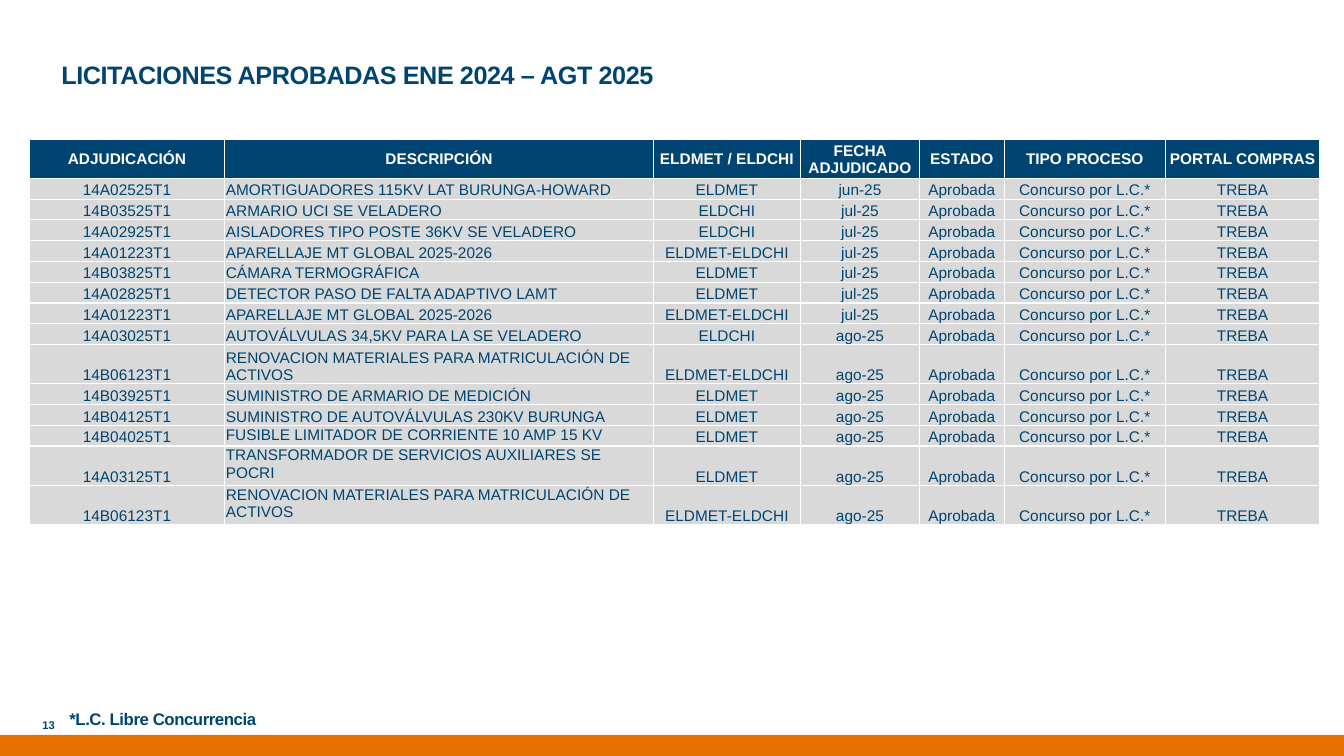
from dataclasses import dataclass

from lxml import etree
from pptx import Presentation
from pptx.dml.color import RGBColor
from pptx.enum.shapes import MSO_SHAPE
from pptx.enum.text import MSO_ANCHOR, PP_ALIGN
from pptx.oxml.ns import qn
from pptx.util import Inches, Pt

RECTANGLE = MSO_SHAPE.RECTANGLE
TOP, MIDDLE, BOTTOM = MSO_ANCHOR.TOP, MSO_ANCHOR.MIDDLE, MSO_ANCHOR.BOTTOM
LEFT, CENTER = PP_ALIGN.LEFT, PP_ALIGN.CENTER


@dataclass(frozen=True)
class Theme:
    font: str = "Arial"
    navy: str = "004571"
    orange: str = "E57200"
    gray: str = "D9D9D9"
    white: str = "FFFFFF"
    title_size: int = 18
    note_size: int = 12
    table_size: int = 11
    page_size: int = 8
    line_spacing: float = 0.92
    tracking: int = -30


THEME = Theme()

HEADERS = [
    "ADJUDICACIÓN", "DESCRIPCIÓN", "ELDMET / ELDCHI", "FECHA ADJUDICADO",
    "ESTADO", "TIPO PROCESO", "PORTAL COMPRAS",
]
COLUMN_WIDTHS = [1.94, 4.25, 1.46, 1.18, 0.84, 1.6, 1.53]
DESCRIPTION_COLUMN = 1
SAME_FOR_ALL = ("Aprobada", "Concurso por L.C.*", "TREBA")
TENDERS = [
    ("14A02525T1", "AMORTIGUADORES 115KV LAT BURUNGA-HOWARD", "ELDMET", "jun-25"),
    ("14B03525T1", "ARMARIO UCI SE VELADERO", "ELDCHI", "jul-25"),
    ("14A02925T1", "AISLADORES TIPO POSTE 36KV SE VELADERO", "ELDCHI", "jul-25"),
    ("14A01223T1", "APARELLAJE MT GLOBAL 2025-2026", "ELDMET-ELDCHI", "jul-25"),
    ("14B03825T1", "CÁMARA TERMOGRÁFICA", "ELDMET", "jul-25"),
    ("14A02825T1", "DETECTOR PASO DE FALTA ADAPTIVO LAMT", "ELDMET", "jul-25"),
    ("14A01223T1", "APARELLAJE MT GLOBAL 2025-2026", "ELDMET-ELDCHI", "jul-25"),
    ("14A03025T1", "AUTOVÁLVULAS 34,5KV PARA LA SE VELADERO", "ELDCHI", "ago-25"),
    ("14B06123T1", "RENOVACION MATERIALES PARA MATRICULACIÓN DE ACTIVOS",
     "ELDMET-ELDCHI", "ago-25"),
    ("14B03925T1", "SUMINISTRO DE ARMARIO DE MEDICIÓN", "ELDMET", "ago-25"),
    ("14B04125T1", "SUMINISTRO DE AUTOVÁLVULAS 230KV BURUNGA", "ELDMET", "ago-25"),
    ("14B04025T1", "FUSIBLE LIMITADOR DE CORRIENTE 10 AMP 15 KV", "ELDMET", "ago-25"),
    ("14A03125T1", "TRANSFORMADOR DE SERVICIOS AUXILIARES SE POCRI",
     "ELDMET", "ago-25"),
    ("14B06123T1", "RENOVACION MATERIALES PARA MATRICULACIÓN DE ACTIVOS",
     "ELDMET-ELDCHI", "ago-25"),
]
TOP_ALIGNED_FROM = 12
SINGLE_ROW, DOUBLE_ROW = 0.206, 0.39
DOUBLE_ROWS = {0, 9, 13, 14}


def color(value):
    return RGBColor.from_string(value)


def add_run(paragraph, text, size, ink, bold):
    run = paragraph.add_run()
    run.text = text
    run.font.name = THEME.font
    run.font.size = Pt(size)
    run.font.bold = bold
    run.font.color.rgb = color(ink)
    return run


def add_label(slide, box, text, size):
    label = slide.shapes.add_textbox(*map(Inches, box))
    frame = label.text_frame
    frame.word_wrap = True
    frame.vertical_anchor = MIDDLE
    run = add_run(frame.paragraphs[0], text, size, THEME.navy, True)
    return frame, run


def add_heading(slide, box, text, size):
    frame, run = add_label(slide, box, text, size)
    frame.paragraphs[0].line_spacing = THEME.line_spacing
    run.font._element.set("spc", str(THEME.tracking))


def add_page_number(slide, box, text):
    frame, _ = add_label(slide, box, text, THEME.page_size)
    frame.margin_left = frame.margin_right = 0
    frame.margin_top = frame.margin_bottom = 0


def add_footer_band(slide, box):
    band = slide.shapes.add_shape(RECTANGLE, *map(Inches, box))
    band.shadow.inherit = False
    band.fill.solid()
    band.fill.fore_color.rgb = color(THEME.orange)
    band.line.fill.background()


def add_borders(cell):
    properties = cell._tc.get_or_add_tcPr()
    for side in ("lnL", "lnR", "lnT", "lnB"):
        border = etree.SubElement(properties, qn(f"a:{side}"), w=str(Pt(1)))
        fill = etree.SubElement(border, qn("a:solidFill"))
        etree.SubElement(fill, qn("a:srgbClr"), val=THEME.white)


def fill_cell(cell, text, background, ink, bold, anchor, alignment):
    add_borders(cell)
    cell.fill.solid()
    cell.fill.fore_color.rgb = color(background)
    cell.margin_left = cell.margin_right = cell.margin_top = Inches(0.01)
    cell.margin_bottom = 0
    cell.vertical_anchor = anchor
    paragraph = cell.text_frame.paragraphs[0]
    paragraph.alignment = alignment
    add_run(paragraph, text, THEME.table_size, ink, bold)


def add_tender_table(slide, left, top):
    rows = [HEADERS] + [tender + SAME_FOR_ALL for tender in TENDERS]
    heights = [DOUBLE_ROW if number in DOUBLE_ROWS else SINGLE_ROW
               for number in range(len(rows))]
    table = slide.shapes.add_table(
        len(rows), len(HEADERS), Inches(left), Inches(top),
        Inches(sum(COLUMN_WIDTHS)), Inches(sum(heights))).table
    table.horz_banding = False
    for column, width in zip(table.columns, COLUMN_WIDTHS):
        column.width = Inches(width)
    for row_number, (values, height) in enumerate(zip(rows, heights)):
        table.rows[row_number].height = Inches(height)
        for column_number, text in enumerate(values):
            cell = table.cell(row_number, column_number)
            if row_number == 0:
                fill_cell(cell, text, THEME.navy, THEME.white, True, MIDDLE, CENTER)
                continue
            is_description = column_number == DESCRIPTION_COLUMN
            at_top = is_description and row_number >= TOP_ALIGNED_FROM
            fill_cell(cell, text, THEME.gray, THEME.navy, False,
                      TOP if at_top else BOTTOM,
                      LEFT if is_description else CENTER)


def main():
    presentation = Presentation()
    presentation.slide_width = Inches(13.33)
    presentation.slide_height = Inches(7.5)
    slide = presentation.slides.add_slide(presentation.slide_layouts[6])
    add_page_number(slide, (0.42, 7.12, 0.47, 0.14), "13")
    add_footer_band(slide, (0, 7.29, 13.33, 0.21))
    add_heading(slide, (0.59, 6.99, 2.84, 0.3),
                "*L.C. Libre Concurrencia", THEME.note_size)
    add_heading(slide, (0.51, 0.43, 10.22, 0.65),
                "LICITACIONES APROBADAS ENE 2024 – AGT 2025", THEME.title_size)
    add_tender_table(slide, 0.29, 1.38)
    presentation.save("out.pptx")


if __name__ == "__main__":
    main()
